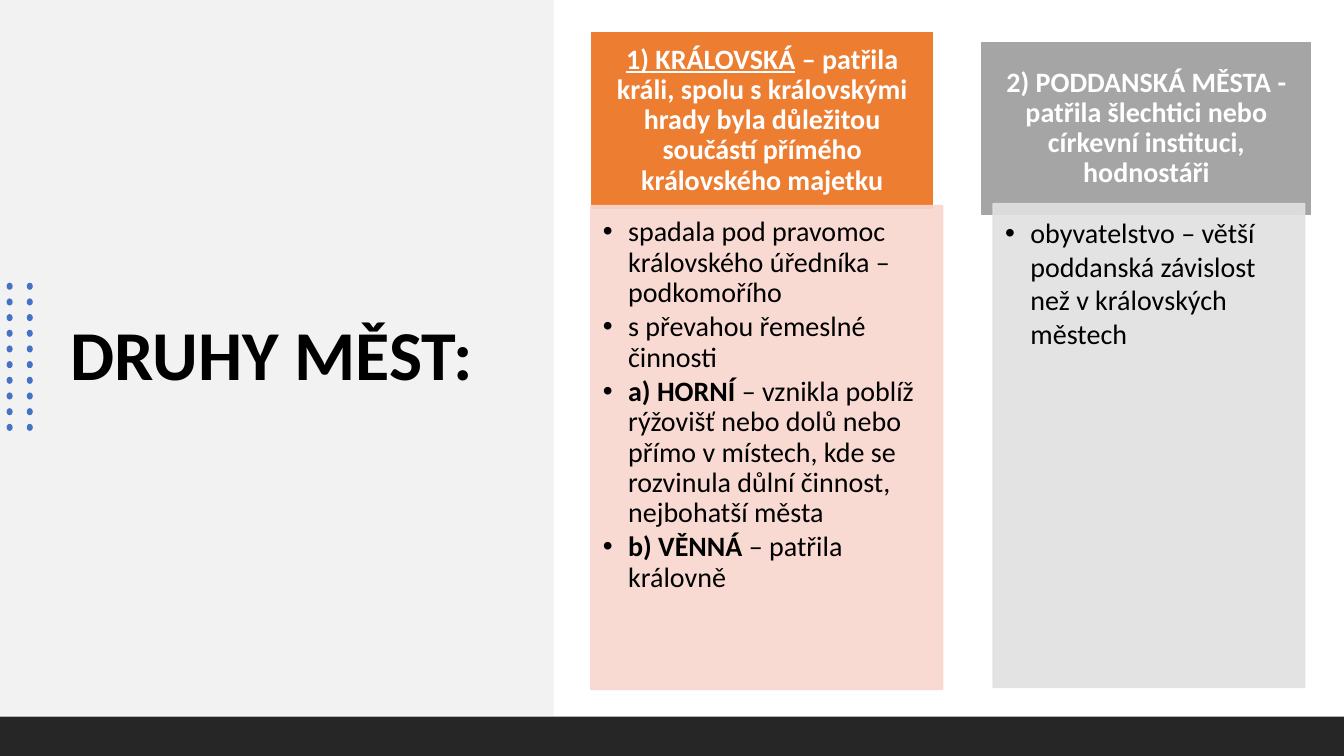
import pptx
import pptx.util
import pptx.dml.color
import pptx.enum.shapes
import pptx.enum.text
import pptx.oxml.ns
import lxml.etree

Inches = pptx.util.Inches
Pt = pptx.util.Pt
SHAPES = pptx.enum.shapes.MSO_SHAPE
ALIGN = pptx.enum.text.PP_ALIGN
ANCHOR = pptx.enum.text.MSO_ANCHOR

COLORS = {
    "panel": "F2F2F2", "footer": "262626", "dot": "4472C4",
    "royal": "ED7D31", "royal_list": "F8D7CE",
    "subject": "A5A5A5", "subject_list": "E1E1E1",
    "dark": "000000", "light": "FFFFFF",
}


def add_plain_shape(page, kind, position, color):
    shape = page.shapes.add_shape(kind, *[Inches(value) for value in position])
    shape.shadow.inherit = False
    shape.fill.solid()
    shape.fill.fore_color.rgb = pptx.dml.color.RGBColor.from_string(COLORS[color])
    shape.line.fill.background()
    return shape


def fill_text(holder, position, insets, anchor, align, spacing, after, size, color, paragraphs):
    """Place a placeholder and write its paragraphs; a run is (text, bold, underline)."""
    holder.left, holder.top, holder.width, holder.height = [Inches(value) for value in position]
    frame = holder.text_frame
    frame.word_wrap = True
    frame.auto_size = pptx.enum.text.MSO_AUTO_SIZE.NONE
    frame.vertical_anchor = anchor
    (frame.margin_left, frame.margin_top,
     frame.margin_right, frame.margin_bottom) = [Inches(value) for value in insets]
    for index, runs in enumerate(paragraphs):
        para = frame.add_paragraph() if index else frame.paragraphs[0]
        para.alignment = align
        para.line_spacing = spacing
        para.space_before = Pt(0)
        para.space_after = Pt(after)
        for text, bold, underline in runs:
            span = para.add_run()
            span.text = text
            span.font.name = "Calibri"
            span.font.size = Pt(size)
            span.font.bold = bold
            span.font.underline = underline
            span.font.color.rgb = pptx.dml.color.RGBColor.from_string(COLORS[color])


deck = pptx.Presentation()
deck.slide_width = Inches(13.33)
deck.slide_height = Inches(7.5)
page = deck.slides.add_slide(deck.slide_layouts.get_by_name("Comparison"))
holders = {holder.placeholder_format.idx: holder for holder in page.placeholders}

# Left panel, behind the title
panel = add_plain_shape(page, SHAPES.RECTANGLE, (0, 0, 5.49, 7.1), "panel")
page.shapes.title.element.addprevious(panel.element)

# Title
fill_text(page.shapes.title, (0.65, 1.32, 4.24, 4.45), (0.05, 0, 0.05, 0),
          ANCHOR.MIDDLE, ALIGN.LEFT, 0.9, 0, 50, "dark",
          [[("DRUHY MĚST:", True, False)]])

# Dot grid
for row in range(10):
    for left in (0.06, 0.26):
        dot = add_plain_shape(page, SHAPES.OVAL, (left, 2.81 + row * 1.4 / 9, 0.07, 0.06), "dot")
        dot.rotation = 90

# Footer band
add_plain_shape(page, SHAPES.RECTANGLE, (0, 7.11, 13.33, 0.39), "footer")

# Two columns: heading box and list box
columns = [
    {
        "color": "royal", "heading_at": (5.87, 0.32, 3.38, 1.75),
        "list_at": (5.86, 2.04, 3.49, 4.8), "spacing": 0.9,
        "heading": [
            ("1) KRÁLOVSKÁ", True, True),
            (" – patřila králi, spolu s královskými hrady byla důležitou "
             "součástí přímého královského majetku", True, False),
        ],
        "list": [
            [("spadala pod pravomoc královského úředníka – podkomořího", False, False)],
            [("s převahou řemeslné činnosti", False, False)],
            [("a) HORNÍ ", True, False),
             ("– vznikla poblíž rýžovišť nebo dolů nebo přímo v místech, kde se "
              "rozvinula důlní činnost, nejbohatší města", False, False)],
            [("b) VĚNNÁ ", True, False), ("– patřila královně", False, False)],
        ],
    },
    {
        "color": "subject", "heading_at": (9.74, 0.42, 3.26, 1.71),
        "list_at": (9.85, 2.02, 3.09, 4.8), "spacing": 1.0,
        "heading": [("2) PODDANSKÁ MĚSTA - patřila šlechtici nebo církevní "
                     "instituci, hodnostáři", True, False)],
        "list": [[("obyvatelstvo – větší poddanská závislost než v královských "
                   "městech", False, False)]],
    },
]
for number, column in enumerate(columns):
    heading, listing = holders[1 + 2 * number], holders[2 + 2 * number]
    fill_text(heading, column["heading_at"], (0.16, 0.09, 0.16, 0.09),
              ANCHOR.MIDDLE, ALIGN.CENTER, 0.9, 0, 20, "light", [column["heading"]])
    fill_text(listing, column["list_at"], (0.12, 0.12, 0.16, 0.17),
              ANCHOR.TOP, ALIGN.LEFT, column["spacing"], 3, 20, "dark", column["list"])

    # Bullets with a hanging indent
    for para in listing.text_frame.paragraphs:
        properties = para._p.get_or_add_pPr()
        properties.set("marL", str(Inches(0.25)))
        properties.set("indent", str(-Inches(0.25)))
        bullet = lxml.etree.SubElement(properties, pptx.oxml.ns.qn("a:buChar"))
        bullet.set("char", "•")

    # Box fills and outlines
    for box, color in ((heading, column["color"]), (listing, column["color"] + "_list")):
        shade = pptx.dml.color.RGBColor.from_string(COLORS[color])
        box.fill.solid()
        box.fill.fore_color.rgb = shade
        box.line.color.rgb = shade
        box.line.width = Pt(1)

    # Lists are slightly see-through
    for tint in listing.element.spPr.iter(pptx.oxml.ns.qn("a:srgbClr")):
        lxml.etree.SubElement(tint, pptx.oxml.ns.qn("a:alpha")).set("val", "90000")

deck.save("out.pptx")
